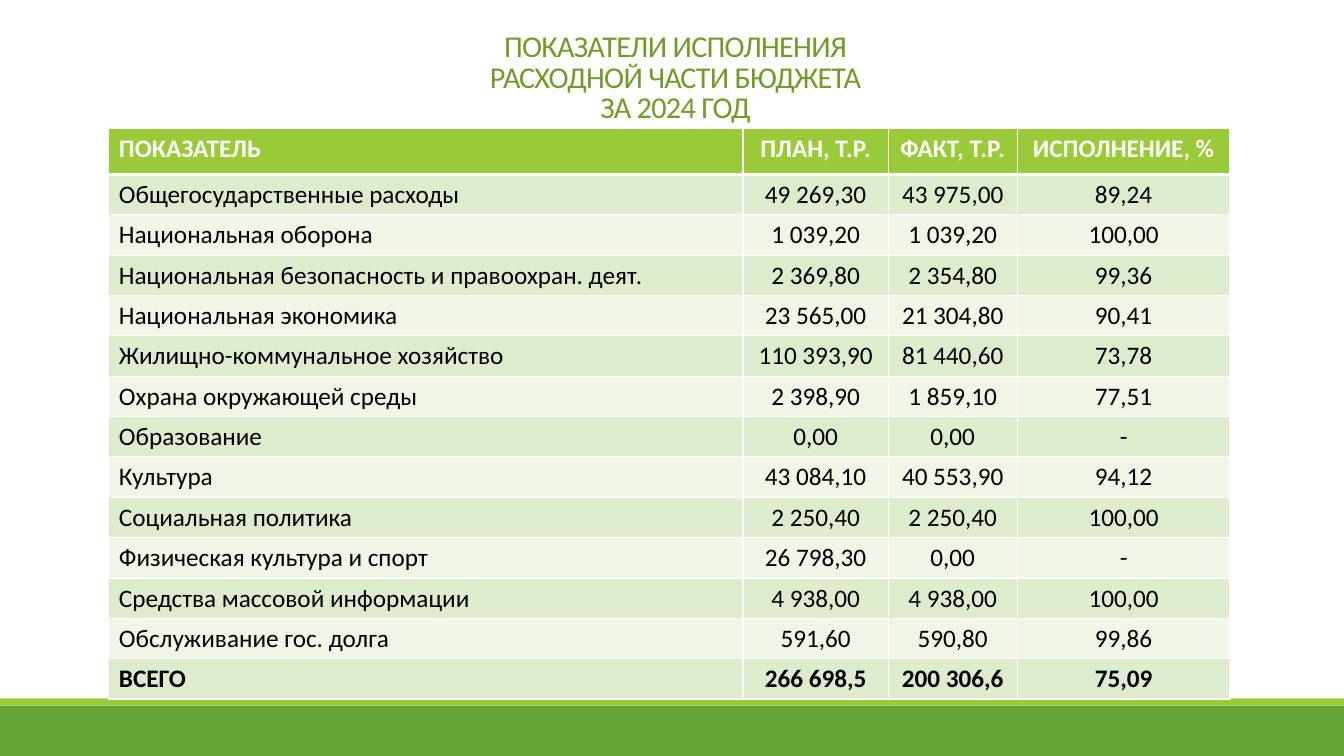
from lxml import etree
from pptx import Presentation
from pptx import util as u
from pptx.dml.color import RGBColor
from pptx.enum import shapes, text
from pptx.oxml import ns

TITLE = ["ПОКАЗАТЕЛИ ИСПОЛНЕНИЯ", "РАСХОДНОЙ ЧАСТИ БЮДЖЕТА", "ЗА 2024 ГОД"]
ROWS = [
    ("ПОКАЗАТЕЛЬ", "ПЛАН, Т.Р.", "ФАКТ, Т.Р.", "ИСПОЛНЕНИЕ, %"),
    ("Общегосударственные расходы", "49 269,30", "43 975,00", "89,24"),
    ("Национальная оборона", "1 039,20", "1 039,20", "100,00"),
    ("Национальная безопасность и правоохран. деят.", "2 369,80", "2 354,80", "99,36"),
    ("Национальная экономика", "23 565,00", "21 304,80", "90,41"),
    ("Жилищно-коммунальное хозяйство", "110 393,90", "81 440,60", "73,78"),
    ("Охрана окружающей среды", "2 398,90", "1 859,10", "77,51"),
    ("Образование", "0,00", "0,00", "-"),
    ("Культура", "43 084,10", "40 553,90", "94,12"),
    ("Социальная политика", "2 250,40", "2 250,40", "100,00"),
    ("Физическая культура и спорт", "26 798,30", "0,00", "-"),
    ("Средства массовой информации", "4 938,00", "4 938,00", "100,00"),
    ("Обслуживание гос. долга", "591,60", "590,80", "99,86"),
    ("ВСЕГО", "266 698,5", "200 306,6", "75,09"),
]
WIDTH, HEIGHT = 13.33, 7.5
BANDS = [(7, 0.5), (6.93, 0.07)]
TABLE_LEFT, TABLE_TOP = 1.08, 1.27
COLUMNS = [6.29, 1.44, 1.28, 2.11]
HEADER_HEIGHT, ROW_HEIGHT = 0.46, 0.4

WHITE = RGBColor(0xFF, 0xFF, 0xFF)
BLACK = RGBColor(0, 0, 0)
GREEN = RGBColor(0x63, 0xA5, 0x37)
LIME = RGBColor(0x99, 0xCB, 0x38)
OLIVE = RGBColor(0x73, 0x9A, 0x28)
STRIPES = [RGBColor(0xEF, 0xF6, 0xE8), RGBColor(0xDE, 0xEC, 0xCE)]


def set_font(font, color, **values):
    for name, value in {"name": "Calibri", **values}.items():
        setattr(font, name, value)
    font.color.rgb = color


def add_bands(page):
    for (top, height), color in zip(BANDS, (GREEN, LIME)):
        band = page.shapes.add_shape(
            shapes.MSO_SHAPE.RECTANGLE, 0, u.Inches(top), u.Inches(WIDTH), u.Inches(height))
        band.shadow.inherit = False
        band.fill.solid()
        band.fill.fore_color.rgb = color
        band.line.fill.background()


def add_title(page):
    box = page.shapes.add_textbox(*map(u.Inches, (1.2, 0.31, 11, 0.98)))
    frame = box.text_frame
    frame.word_wrap = True
    frame.vertical_anchor = text.MSO_ANCHOR.BOTTOM
    para = frame.paragraphs[0]
    para.alignment = text.PP_ALIGN.CENTER
    para.line_spacing = 0.85
    para.text = "\v".join(TITLE)
    for span in para.runs:
        set_font(span.font, OLIVE, size=u.Pt(21.6))
        span.font._element.set("spc", "-50")


def add_borders(cell, bottom_width):
    """Draw white cell edges; call before the cell is filled."""
    properties = cell._tc.get_or_add_tcPr()
    for side, width in zip("LRTB", (1, 1, 1, bottom_width)):
        edge = etree.SubElement(properties, ns.qn(f"a:ln{side}"), w=str(u.Pt(width)))
        fill = etree.SubElement(edge, ns.qn("a:solidFill"))
        etree.SubElement(fill, ns.qn("a:srgbClr"), val=str(WHITE))


def add_budget_table(page):
    heights = [HEADER_HEIGHT] + [ROW_HEIGHT] * (len(ROWS) - 1)
    table = page.shapes.add_table(
        len(ROWS), len(COLUMNS), u.Inches(TABLE_LEFT), u.Inches(TABLE_TOP),
        u.Inches(sum(COLUMNS)), u.Inches(sum(heights))).table
    for column, width in zip(table.columns, COLUMNS):
        column.width = u.Inches(width)
    for row, height in zip(table.rows, heights):
        row.height = u.Inches(height)
    for i, values in enumerate(ROWS):
        header, total = i == 0, i == len(ROWS) - 1
        for j, value in enumerate(values):
            cell = table.cell(i, j)
            add_borders(cell, 3 if header else 1)
            cell.fill.solid()
            cell.fill.fore_color.rgb = LIME if header else STRIPES[i % 2]
            para = cell.text_frame.paragraphs[0]
            para.alignment = text.PP_ALIGN.CENTER if j else text.PP_ALIGN.LEFT
            span = para.add_run()
            span.text = value
            set_font(span.font, WHITE if header else BLACK,
                     size=u.Pt(18), bold=header or total)


def main():
    deck = Presentation()
    deck.slide_width, deck.slide_height = u.Inches(WIDTH), u.Inches(HEIGHT)
    page = deck.slides.add_slide(deck.slide_layouts[6])
    add_bands(page)
    add_title(page)
    add_budget_table(page)
    deck.save("out.pptx")


if __name__ == "__main__":
    main()
